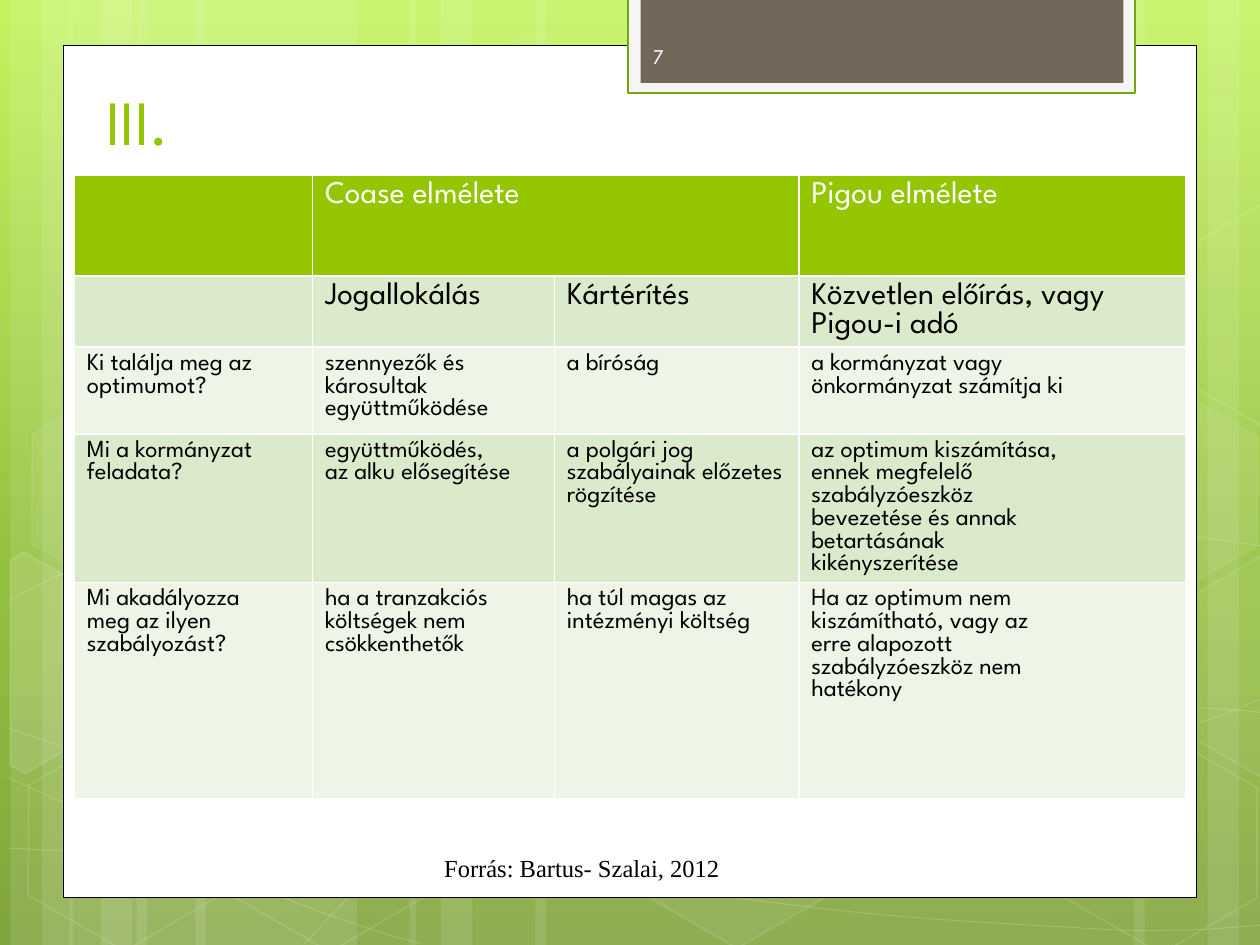
from copy import deepcopy
from math import cos, radians, sin

from lxml.etree import SubElement as Sub
from pptx import Presentation
from pptx.dml.color import RGBColor
from pptx.enum.shapes import MSO_SHAPE as Form
from pptx.enum.text import MSO_ANCHOR as Anchor
from pptx.oxml.ns import qn
from pptx.util import Pt

SANS, SERIF = "League Spartan", "Times New Roman"
WHITE, BLACK, GREEN = "FFFFFF", "000000", "94C600"
PALE, LIGHT = "DCEACC", "EEF5E7"
TILT = 30

# Left edge, width and rotation of the vertical light bars
BARS = [(78, 126, 0), (6, 36, 0), (24, 60, 0), (111.6, 126, 0), (39.6, 36, 0),
        (57.6, 60, 0), (528, 126, 180), (690, 36, 180), (648, 60, 180),
        (306, 222, 0), (234, 36, 0), (252, 60, 0)]
# Left, top, fill opacity and line opacity of the hexagons
HEXES = [(240.5, 26, 4, 8), (358, 424, 6, 12), (8, 425.5, 0, 12),
         (10, 224.6, 7, 8), (125.3, 426, 0, 12), (542, 326, 10, 12),
         (600.5, 427, 0, 12), (600.5, 226, 7, 8)]
# Each curve: a start point, then three points per Bezier piece
CURVES = [
    [(5, 484.6), (44, 486.7), (82.8, 488.9), (136.8, 488.2),
     (190.8, 487.4), (257.8, 486), (329.8, 478.8),
     (401.8, 471.6), (504, 457.9), (570.2, 444.2),
     (635.8, 430.6), (703.4, 409), (725, 396.7)],
    [(5, 343.4), (26, 332), (46.8, 321), (87, 310.3),
     (128.2, 299.5), (186.5, 283.7), (249.8, 278.6),
     (314, 273.6), (391.7, 273), (471, 278.6),
     (550, 284.4), (681.8, 306.7), (725, 312.5)],
    [(4.3, 444.2), (91.4, 483.8), (177.8, 523.4), (240.5, 539.3)],
    [(5, 416.2), (27.4, 424), (50.4, 432), (92.2, 443.5),
     (134, 454.3), (196.6, 472.3), (257, 484.6),
     (316.8, 496.8), (392.4, 509.8), (452.2, 517),
     (512, 525), (576, 527.8), (614.2, 530),
     (651.6, 532.8), (661.7, 531.4), (680.4, 531.4),
     (699, 530.6), (712, 529.2), (725, 528.5)],
    [(174.2, 539.3), (187.2, 525), (200.2, 510.5), (217.4, 497.5),
     (234.7, 484.6), (259.2, 470.2), (279.4, 460),
     (299.5, 450), (311.8, 445.7), (338.4, 438.5),
     (364.3, 431.3), (412.6, 421.2), (437.8, 416.2),
     (463.7, 411), (467.3, 411), (489.6, 409.7),
     (512, 407.5), (547.2, 405.4), (571.7, 404.6),
     (597, 404), (638, 404.6), (638, 404.6),
     (653, 404.6), (670, 404.6), (686.2, 404.6),
     (699, 405.4), (711.4, 406), (717.8, 406.8),
     (724.3, 407.5), (722.2, 406.8), (724.3, 407.5)],
]
# Hexagons cut by the slide edges, and the centres they turn about
LEFT = [(5.8, 320.4), (13.7, 315.4), (69, 347), (68.4, 410.4), (14.4, 442), (5.8, 437)]
RIGHT = [(666.7, 349.2), (720.7, 317.5), (726.5, 321), (726.5, 441.4),
         (721.4, 444.2), (666.7, 412.6)]
PARTS = [(LEFT, (25.9, 385.2), 0, 10), (RIGHT, (709.2, 374.4), 0, 4),
         (RIGHT, (709.2, 374.4), 200.9, 0)]

COLS = [136.1, 138.2, 139.7, 221]
ROWS = [57.6, 40.3, 49.7, 84.7, 123.8]
CELLS = [
    ["", "Coase elmélete", "", "Pigou elmélete"],
    ["", "Jogallokálás", "Kártérítés", "Közvetlen előírás, vagy Pigou-i adó"],
    ["Ki találja meg az\noptimumot?", "szennyezők és\nkárosultak\negyüttműködése",
     "a bíróság", "a kormányzat vagy\nönkormányzat számítja ki"],
    ["Mi a kormányzat\nfeladata?", "együttműködés,\naz alku elősegítése",
     "a polgári jog\nszabályainak előzetes\nrögzítése",
     "az optimum kiszámítása,\nennek megfelelő\nszabályzóeszköz\n"
     "bevezetése és annak\nbetartásának\nkikényszerítése"],
    ["Mi akadályozza\nmeg az ilyen\nszabályozást?",
     "ha a tranzakciós\nköltségek nem\ncsökkenthetők",
     "ha túl magas az\nintézményi költség",
     "Ha az optimum nem\nkiszámítható, vagy az\nerre alapozott\n"
     "szabályzóeszköz nem\nhatékony"],
]


def rgb(code):
    return RGBColor.from_string(code)


def tint(fill, code):
    if code:
        fill.solid()
        fill.fore_color.rgb = rgb(code)
    else:
        fill.background()


def paint(shape, fill=None, line=None, width=1, clear=(100, 100)):
    """Set fill, line and the opacity of both."""
    shape.shadow.inherit = False
    tint(shape.fill, fill)
    tint(shape.line.fill, line)
    if line:
        shape.line.width = Pt(width)
    props = shape.element.spPr
    for node, part in zip((props, props.find(qn("a:ln"))), clear):
        tone = node.find(f"{qn('a:solidFill')}/{qn('a:srgbClr')}")
        if tone is not None and part < 100:
            Sub(tone, qn("a:alpha"), val=str(part * 1000))


def block(slide, box, form=Form.RECTANGLE, **look):
    shape = slide.shapes.add_shape(form, *map(Pt, box))
    paint(shape, **look)
    return shape


def trace(slide, spots, close, **look):
    spots = [(Pt(x), Pt(y)) for x, y in spots]
    pen = slide.shapes.build_freeform(*spots[0])
    pen.add_line_segments(spots[1:], close=close)
    shape = pen.convert_to_shape()
    paint(shape, **look)
    return shape


def bend(shape):
    """Turn each three line segments into one Bezier piece."""
    lines = list(shape.element.iter(qn("a:lnTo")))
    for i in range(0, len(lines), 3):
        home = lines[i].getparent()
        piece = Sub(home, qn("a:cubicBezTo"))
        for line in lines[i:i + 3]:
            piece.append(line[0])
            home.remove(line)


def turn(spots, mid, angle):
    c, s = cos(radians(angle)), sin(radians(angle))
    return [(mid[0] + (x - mid[0]) * c - (y - mid[1]) * s,
             mid[1] + (x - mid[0]) * s + (y - mid[1]) * c) for x, y in spots]


def write(frame, text, font, size, color):
    frame.text = text
    for para in frame.paragraphs:
        para.font.name, para.font.size = font, Pt(size)
        para.font.color.rgb = rgb(color)


def label(slide, box, text, font, size, color, anchor=Anchor.TOP):
    frame = slide.shapes.add_textbox(*map(Pt, box)).text_frame
    frame.word_wrap, frame.vertical_anchor = True, anchor
    write(frame, text, font, size, color)


def backdrop(slide, box):
    x, y, w, h = box
    # Three-stop gradient running down the slide
    fill = slide.background.fill
    fill.gradient()
    fill.gradient_angle = 270
    stops = slide.element.find(".//" + qn("a:gsLst"))
    stops.append(deepcopy(stops[-1]))
    for stop, (spot, code) in zip(fill.gradient_stops, [
            (0, "C3F35F"), (0.62, "93BF3F"), (1, "81A53E")]):
        stop.position, stop.color.rgb = spot, rgb(code)
    # Light bars, curves and hexagons
    for left, wide, angle in BARS:
        bar = block(slide, (x + left, y, wide, h), fill=WHITE, clear=(10, 100))
        bar.rotation = angle
    for knots in CURVES:
        bend(trace(slide, [(x + a, y + b) for a, b in knots], False,
                   line=WHITE, width=0.5, clear=(100, 20)))
    for left, top, face, edge in HEXES:
        tile = block(slide, (x + left, y + top, 126, 109.4), Form.HEXAGON,
                     fill=WHITE if face else None, line=WHITE, clear=(face, edge))
        tile.adjustments[0] = 0.285
        tile.rotation = TILT
    for spots, mid, rise, face in PARTS:
        flat = [(x + a, y + b - rise) for a, b in turn(spots, mid, -TILT)]
        tile = trace(slide, flat, True, fill=WHITE if face else None,
                     line=WHITE, clear=(face, 12))
        tile.rotation = TILT


def panel(slide, box):
    x, y, w, h = box
    block(slide, box, fill=WHITE, line=BLACK, width=0.5)
    # Page tab at the top
    block(slide, (x + 323, y - 27.3, 289.6, 54.6), fill="F5F5F5", line="74A510", width=1.25)
    block(slide, (x + 330, y - 27.3, 276, 48.8), fill="71685A")


def heading(slide, box):
    title = slide.shapes.title
    title.left, title.top, title.width, title.height = map(Pt, box)
    title.text_frame.vertical_anchor = Anchor.BOTTOM
    write(title.text_frame, "III.", SANS, 36, GREEN)
    title.text_frame.paragraphs[0].alignment = 1
    # Bring the title in front of the backdrop
    title.element.getparent().append(title.element)


def edge(cell, code):
    props = cell._tc.get_or_add_tcPr()
    for side in "LRTB":
        line = Sub(props, qn("a:ln" + side), w=str(Pt(1)))
        Sub(Sub(line, qn("a:solidFill")), qn("a:srgbClr"), val=code)


def matrix(slide, box):
    table = slide.shapes.add_table(len(ROWS), len(COLS), *map(Pt, box)).table
    table.first_row = table.horz_banding = False
    for col, wide in zip(table.columns, COLS):
        col.width = Pt(wide)
    for r, (row, tall) in enumerate(zip(table.rows, ROWS)):
        row.height = Pt(tall)
        for cell, text in zip(row.cells, CELLS[r]):
            edge(cell, WHITE)
            tint(cell.fill, GREEN if r == 0 else PALE if r % 2 else LIGHT)
            write(cell.text_frame, text, SANS, 18 if r < 2 else 14, BLACK if r else WHITE)
    table.cell(0, 1).merge(table.cell(0, 2))


def main():
    deck = Presentation()
    deck.slide_width, deck.slide_height = Pt(720), Pt(540)
    slide = deck.slides.add_slide(deck.slide_layouts[5])
    backdrop(slide, (0, 0, 720, 540))
    panel(slide, (36, 25.9, 648, 487.1))
    heading(slide, (53.7, 48.7, 553, 45.4))
    matrix(slide, (42.5, 100.2, sum(COLS), sum(ROWS)))
    label(slide, (366, 17.6, 105, 29), "7", SANS, 12, "FEFEFE", Anchor.MIDDLE)
    label(slide, (246.7, 484, 300, 24.5), "Forrás: Bartus- Szalai, 2012", SERIF, 14, BLACK)
    deck.save("out.pptx")


if __name__ == "__main__":
    main()
